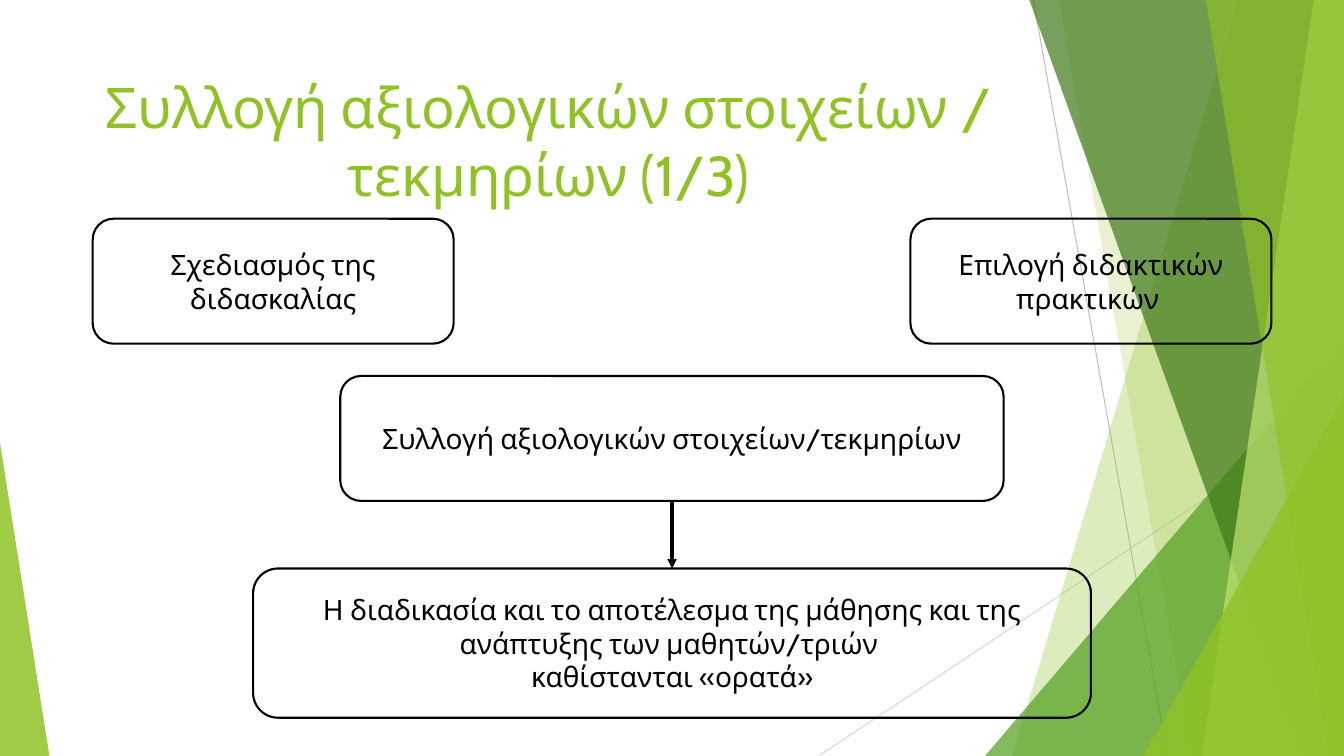
from pptx import Presentation
from pptx import util as u
from pptx.dml.color import RGBColor
from pptx.enum import shapes, text
from pptx.oxml.ns import qn
from lxml import etree


def colour(value):
    return RGBColor.from_string(value)


def add_child(parent, tag, **attributes):
    return etree.SubElement(parent, qn(tag), attributes)


def write(para, words, size=20, font="Cabin", ink="000000"):
    para.alignment = text.PP_ALIGN.CENTER
    span = para.add_run()
    span.text = words
    span.font.size = u.Pt(size)
    span.font.name = font
    span.font.color.rgb = colour(ink)


class SlideBuilder:
    """Places elements by percentages of the slide's width and height."""

    INK, GREEN = "000000", "90C226"
    TITLE_SIZE = 40

    def __init__(self, deck):
        self.deck = deck
        self.page = deck.slides.add_slide(deck.slide_layouts[5])

    def x(self, share):
        return round(self.deck.slide_width * share / 100)

    def y(self, share):
        return round(self.deck.slide_height * share / 100)

    def area(self, left, top, width, height):
        return self.x(left), self.y(top), self.x(width), self.y(height)

    def title(self, words, *area):
        title = self.page.shapes.title
        title.left, title.top, title.width, title.height = self.area(*area)
        frame = title.text_frame
        frame.word_wrap = True
        frame.auto_size = text.MSO_AUTO_SIZE.NONE
        write(frame.paragraphs[0], words, size=self.TITLE_SIZE, ink=self.GREEN)
        # Bring the title in front of the backdrop
        title._element.getparent().append(title._element)

    def tint(self, shape, fill, opacity):
        shape.shadow.inherit = False
        shape.line.fill.background()
        shape.fill.solid()
        shape.fill.fore_color.rgb = colour(fill)
        tone = shape._element.spPr.find(qn("a:solidFill"))[0]
        add_child(tone, "a:alpha", val=str(opacity * 1000))

    def band(self, top, bottom, fill, opacity):
        """Fill from a slanted left edge to the slide's right side."""
        start, *rest = [(self.x(a), self.y(b)) for a, b in
                        ((top, 0), (100, 0), (100, 100), (bottom, 100))]
        builder = self.page.shapes.build_freeform(*start)
        builder.add_line_segments(rest, close=True)
        self.tint(builder.convert_to_shape(), fill, opacity)

    def corner(self, left, top, width, apex, fill, opacity):
        """Stand a triangle on the slide's bottom edge; apex is 0 to 1."""
        triangle = self.page.shapes.add_shape(
            shapes.MSO_SHAPE.ISOSCELES_TRIANGLE,
            *self.area(left, top, width, 100 - top))
        triangle.adjustments[0] = apex
        self.tint(triangle, fill, opacity)

    def line(self, start, end, ink, weight):
        line = self.page.shapes.add_connector(
            shapes.MSO_CONNECTOR.STRAIGHT,
            self.x(start[0]), self.y(start[1]), self.x(end[0]), self.y(end[1]))
        line.line.color.rgb = colour(ink)
        line.line.width = u.Pt(weight)
        add_child(line._element.spPr, "a:effectLst")
        return line

    def box(self, lines, *area):
        box = self.page.shapes.add_shape(
            shapes.MSO_SHAPE.ROUNDED_RECTANGLE, *self.area(*area))
        box.shadow.inherit = False
        box.fill.background()
        box.line.color.rgb = colour(self.INK)
        box.line.width = u.Pt(1.5)
        frame = box.text_frame
        frame.word_wrap = True
        frame.vertical_anchor = text.MSO_ANCHOR.MIDDLE
        for index, words in enumerate(lines):
            para = frame.add_paragraph() if index else frame.paragraphs[0]
            write(para, words, ink=self.INK)
        return box

    def centred_box(self, lines, top, width, height):
        return self.box(lines, (100 - width) / 2, top, width, height)

    def arrow_down(self, upper, lower):
        arrow = self.line((50, 0), (50, 100), self.INK, 2.25)
        arrow.begin_connect(upper, 2)
        arrow.end_connect(lower, 0)
        add_child(arrow.line._get_or_add_ln(), "a:tailEnd", type="triangle")

    def backdrop(self):
        self.line((76.89, 0), (86.87, 100), "BFBFBF", 0.75)
        self.line((100, 53.73), (60.92, 100), "D9D9D9", 0.75)
        self.band(92.12, 75.32, self.GREEN, 30)
        self.band(78.77, 88.67, self.GREEN, 20)
        self.corner(73.29, 44.4, 26.71, 1, "54A021", 72)
        self.band(76.59, 96.85, "3F7819", 70)
        self.band(97.75, 89.42, "C0E474", 70)
        self.band(89.72, 98.87, self.GREEN, 65)
        self.corner(85.07, 52.4, 14.93, 1, self.GREEN, 80)
        self.corner(0, 58.53, 3.68, 0, self.GREEN, 85)


def main():
    deck = Presentation()
    deck.slide_width, deck.slide_height = u.Inches(13.33), u.Inches(7.5)
    slide = SlideBuilder(deck)
    slide.backdrop()
    slide.title("Συλλογή αξιολογικών στοιχείων / τεκμηρίων (1/3)",
                5.55, 8.93, 70.52, 19.2)

    box_height = 16.53
    starting_points = ((6.9, "Σχεδιασμός της διδασκαλίας"),
                       (67.74, "Επιλογή διδακτικών πρακτικών "))
    for left, words in starting_points:
        slide.box([words], left, 28.93, 26.86, box_height)

    collection = slide.centred_box(
        ["Συλλογή αξιολογικών στοιχείων/τεκμηρίων"], 49.73, 49.36, box_height)
    outcome = slide.centred_box(
        ["Η διαδικασία και το αποτέλεσμα της μάθησης και της "
         "ανάπτυξης των μαθητών/τριών ",
         "καθίστανται «ορατά»"], 75.2, 62.34, 19.73)
    slide.arrow_down(collection, outcome)
    deck.save("out.pptx")


if __name__ == "__main__":
    main()
